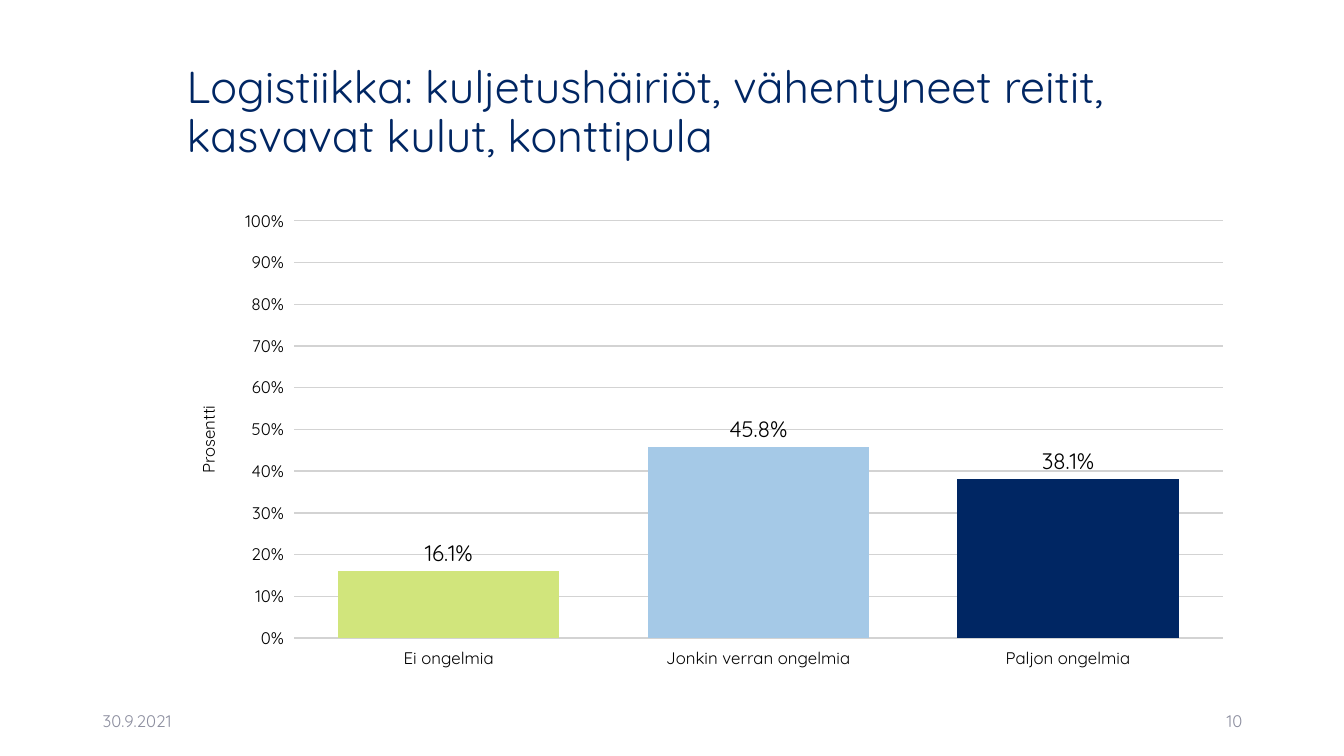
from dataclasses import dataclass

from lxml.etree import SubElement
from pptx import Presentation
from pptx.chart.data import CategoryChartData
from pptx.dml.color import RGBColor
from pptx.enum.chart import XL_CHART_TYPE as ChartType
from pptx.enum.chart import XL_LABEL_POSITION as LabelPosition
from pptx.enum.chart import XL_TICK_MARK as TickMark
from pptx.enum.text import MSO_ANCHOR as Anchor
from pptx.enum.text import MSO_AUTO_SIZE as AutoSize
from pptx.enum.text import PP_ALIGN as Align
from pptx.oxml.ns import qn
from pptx.util import Inches, Pt


@dataclass(frozen=True)
class Theme:
    font: str = "Quicksand"
    navy: str = "002663"
    sky: str = "A5C9E7"
    lime: str = "D1E57C"
    footer: str = "8C8E9F"
    grid: str = "D3D3D3"
    text: str = "000000"
    white: str = "FFFFFF"
    title_size: int = 32
    value_size: int = 16
    small_size: int = 12


@dataclass(frozen=True)
class Answer:
    label: str
    share: float
    color: str


@dataclass(frozen=True)
class FooterItem:
    text: str
    left: float
    align: Align


THEME = Theme()
ANSWERS = [
    Answer("Ei ongelmia", 0.161, THEME.lime),
    Answer("Jonkin verran ongelmia", 0.458, THEME.sky),
    Answer("Paljon ongelmia", 0.381, THEME.navy),
]
FOOTER = [
    FooterItem("30.9.2021", 0.92, Align.LEFT),
    FooterItem("10", 9.42, Align.RIGHT),
]
CONTENT_LEFT, CONTENT_WIDTH = Inches(1.75), Inches(10.59)
PLOT_LAYOUT = {"x": 0.11, "y": 0.04, "w": 0.87, "h": 0.87}


def style_font(font, size: int, color: str) -> None:
    font.name = THEME.font
    font.size = Pt(size)
    font.bold = False
    font.color.rgb = RGBColor.from_string(color)


def paint(fill, color: str) -> None:
    fill.solid()
    fill.fore_color.rgb = RGBColor.from_string(color)


def write(frame, text: str, size: int, color: str, align: Align) -> None:
    frame.word_wrap = True
    frame.auto_size = AutoSize.NONE
    frame.vertical_anchor = Anchor.MIDDLE
    paragraph = frame.paragraphs[0]
    paragraph.alignment = align
    run = paragraph.add_run()
    run.text = text
    style_font(run.font, size, color)


def add_heading(slide, text: str) -> None:
    heading = slide.shapes.title
    heading.left, heading.top = CONTENT_LEFT, Inches(0.4)
    heading.width, heading.height = CONTENT_WIDTH, Inches(1.45)
    write(heading.text_frame, text, THEME.title_size, THEME.navy, Align.LEFT)
    heading.text_frame.paragraphs[0].line_spacing = 0.9


def add_footer_item(slide, item: FooterItem) -> None:
    footer = slide.shapes.add_textbox(
        Inches(item.left), Inches(6.95), Inches(3), Inches(0.4))
    write(footer.text_frame, item.text, THEME.small_size, THEME.footer, item.align)


def format_plot_area(chart) -> None:
    plot_area = chart.plots[0]._element.getparent()
    # Fixed inner position of the plot
    layout = plot_area.find(qn("c:layout"))
    if layout is None:
        layout = SubElement(plot_area, qn("c:layout"))
        plot_area.insert(0, layout)
    manual = SubElement(layout, qn("c:manualLayout"))
    SubElement(manual, qn("c:layoutTarget"), val="inner")
    for side in "xy":
        SubElement(manual, qn(f"c:{side}Mode"), val="edge")
    for side, share in PLOT_LAYOUT.items():
        SubElement(manual, qn(f"c:{side}"), val=str(share))
    # White background
    properties = SubElement(plot_area, qn("c:spPr"))
    fill = SubElement(properties, qn("a:solidFill"))
    SubElement(fill, qn("a:srgbClr"), val=THEME.white)


def format_axes(chart) -> None:
    for axis in (chart.category_axis, chart.value_axis):
        axis.major_tick_mark = TickMark.OUTSIDE
        axis.minor_tick_mark = TickMark.NONE
        axis.format.line.fill.background()
        style_font(axis.tick_labels.font, THEME.small_size, THEME.text)

    percent = chart.value_axis
    percent.minimum_scale, percent.maximum_scale = 0, 1
    percent.major_unit = 0.1
    percent.tick_labels.number_format = "0%"
    percent.tick_labels.number_format_is_linked = False
    percent.has_major_gridlines = True
    gridline = percent.major_gridlines.format.line
    gridline.width = Pt(1)
    gridline.color.rgb = RGBColor.from_string(THEME.grid)

    percent.has_title = True
    caption = percent.axis_title.text_frame.paragraphs[0].add_run()
    caption.text = "Prosentti"
    style_font(caption.font, THEME.small_size, THEME.text)


def add_answer_chart(slide, answers: list[Answer]) -> None:
    data = CategoryChartData(number_format="0.0%")
    data.categories = [answer.label for answer in answers]
    data.add_series("Series 1", [answer.share for answer in answers])
    chart = slide.shapes.add_chart(
        ChartType.COLUMN_CLUSTERED, CONTENT_LEFT, Inches(2),
        CONTENT_WIDTH, Inches(4.76), data).chart
    chart.has_legend = False
    chart.has_title = False
    style_font(chart.font, THEME.small_size, THEME.text)

    # Columns
    columns = chart.plots[0]
    columns.gap_width = 40
    columns.vary_by_categories = False
    shares = columns.series[0]
    paint(shares.format.fill, THEME.lime)
    for index, answer in enumerate(answers):
        paint(shares.points[index].format.fill, answer.color)

    # Value labels
    labels = shares.data_labels
    labels.show_value = True
    labels.position = LabelPosition.OUTSIDE_END
    labels.number_format = "0.0%"
    labels.number_format_is_linked = False
    style_font(labels.font, THEME.value_size, THEME.text)

    format_axes(chart)
    format_plot_area(chart)


def main() -> None:
    deck = Presentation()
    deck.slide_width, deck.slide_height = Inches(13.33), Inches(7.5)
    slide = deck.slides.add_slide(deck.slide_layouts.get_by_name("Title Only"))
    paint(slide.background.fill, THEME.white)

    add_heading(slide, "Logistiikka: kuljetushäiriöt, vähentyneet reitit, "
                       "kasvavat kulut, konttipula")
    for item in FOOTER:
        add_footer_item(slide, item)
    add_answer_chart(slide, ANSWERS)
    deck.save("out.pptx")


if __name__ == "__main__":
    main()
